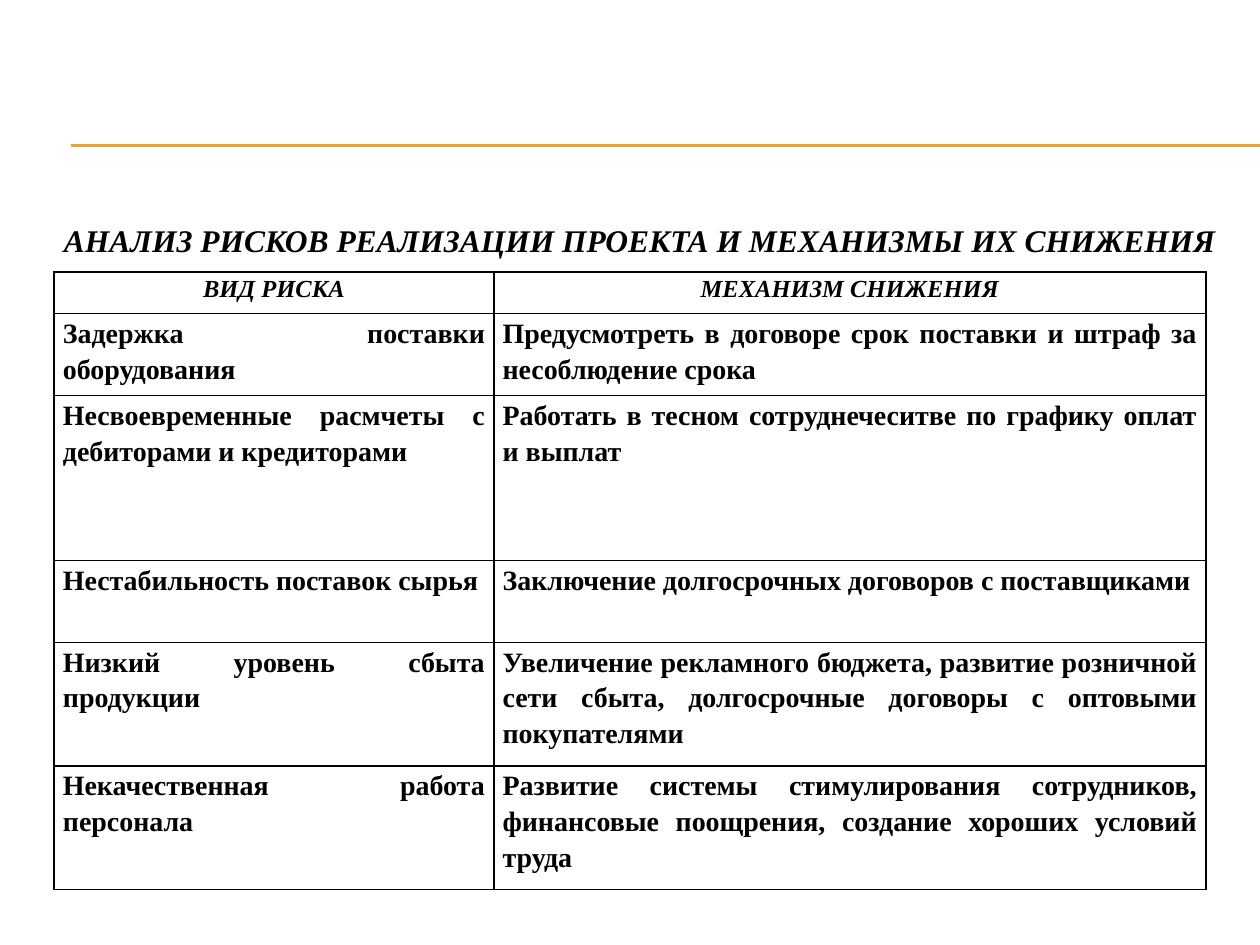
import pptx
import pptx.dml.color
import pptx.enum.shapes
import pptx.enum.text
import pptx.oxml
import pptx.oxml.ns
import pptx.util

Inches = pptx.util.Inches
Pt = pptx.util.Pt
ALIGN = pptx.enum.text.PP_ALIGN
ANCHOR = pptx.enum.text.MSO_ANCHOR

COLORS = {"text": "000000", "border": "000000", "rule": "F0A22E"}
FONT = {"name": "Times New Roman", "bold": True}
INSETS = {"margin_left": 0.07, "margin_right": 0.07, "margin_top": 0, "margin_bottom": 0}
COL_WIDTHS = [3.49, 5.65]
ROW_HEIGHTS = [0.33, 0.65, 1.31, 0.65, 0.98, 0.98]
RISKS = [
    ("ВИД РИСКА", "МЕХАНИЗМ СНИЖЕНИЯ"),
    ("Задержка поставки оборудования",
     "Предусмотреть в договоре срок поставки и штраф за несоблюдение срока"),
    ("Несвоевременные расмчеты с дебиторами и кредиторами",
     "Работать в тесном сотруднечеситве по графику оплат и выплат"),
    ("Нестабильность поставок сырья",
     "Заключение долгосрочных договоров с поставщиками"),
    ("Низкий уровень сбыта продукции",
     "Увеличение рекламного бюджета, развитие розничной сети сбыта, "
     "долгосрочные договоры с оптовыми покупателями"),
    ("Некачественная работа персонала",
     "Развитие системы стимулирования сотрудников, финансовые поощрения, "
     "создание хороших условий труда"),
]


def rgb(key):
    return pptx.dml.color.RGBColor.from_string(COLORS[key])


def set_attrs(obj, values):
    for name, value in values.items():
        setattr(obj, name, value)


def write_text(tf, text, size, italic, para):
    p = tf.paragraphs[0]
    set_attrs(p, para)
    r = p.add_run()
    r.text = text
    set_attrs(r.font, {**FONT, "size": Pt(size), "italic": italic})
    r.font.color.rgb = rgb("text")


def add_rules(s, left, top, width, gap):
    for y in (top, top + gap):
        line = s.shapes.add_connector(
            pptx.enum.shapes.MSO_CONNECTOR.STRAIGHT,
            Inches(left), Inches(y), Inches(left + width), Inches(y))
        line.line.color.rgb = rgb("rule")
        line.line.width = Pt(0.75)
        pptx.oxml.ns.qn("a:effectLst")
        line._element.spPr.append(pptx.oxml.parse_xml(
            f'<a:effectLst {pptx.oxml.ns.nsdecls("a")}/>'))


def add_title(s, left, top, width, height):
    sp = s.shapes.title
    set_attrs(sp, {"left": Inches(left), "top": Inches(top),
                   "width": Inches(width), "height": Inches(height)})
    tf = sp.text_frame
    set_attrs(tf, {"word_wrap": True, "vertical_anchor": ANCHOR.TOP,
                   "auto_size": pptx.enum.text.MSO_AUTO_SIZE.NONE})
    write_text(tf, "АНАЛИЗ РИСКОВ РЕАЛИЗАЦИИ ПРОЕКТА И МЕХАНИЗМЫ ИХ СНИЖЕНИЯ",
               18, True, {"alignment": ALIGN.CENTER})


def set_borders(cell):
    tcPr = cell._tc.get_or_add_tcPr()
    for i, side in enumerate("LRTB"):
        tcPr.insert(i, pptx.oxml.parse_xml(
            f'<a:ln{side} {pptx.oxml.ns.nsdecls("a")} w="{Pt(1)}"><a:solidFill>'
            f'<a:srgbClr val="{COLORS["border"]}"/></a:solidFill></a:ln{side}>'))


def add_risk_table(s, left, top, width, height):
    table = s.shapes.add_table(
        len(RISKS), len(COL_WIDTHS), Inches(left), Inches(top),
        Inches(width), Inches(height)).table
    table.horz_banding = False
    for col, w in zip(table.columns, COL_WIDTHS):
        col.width = Inches(w)
    for i, (row, h, texts) in enumerate(zip(table.rows, ROW_HEIGHTS, RISKS)):
        row.height = Inches(h)
        header = i == 0
        para = {"alignment": ALIGN.CENTER if header else ALIGN.JUSTIFY,
                "line_spacing": 1.15}
        for cell, text in zip(row.cells, texts):
            set_attrs(cell, {k: Inches(v) for k, v in INSETS.items()})
            cell.vertical_anchor = ANCHOR.TOP
            cell.fill.background()
            set_borders(cell)
            write_text(cell.text_frame, text, 14 if header else 16, header, para)


def main():
    prs = pptx.Presentation()
    set_attrs(prs, {"slide_width": Inches(10), "slide_height": Inches(7.5)})
    s = prs.slides.add_slide(prs.slide_layouts[5])
    add_rules(s, 0.56, 1.15, 9.44, 0.01)
    add_title(s, 0.33, 1.7, 9.5, 0.46)
    add_risk_table(s, 0.43, 2.16, sum(COL_WIDTHS), sum(ROW_HEIGHTS))
    prs.save("out.pptx")


if __name__ == "__main__":
    main()
